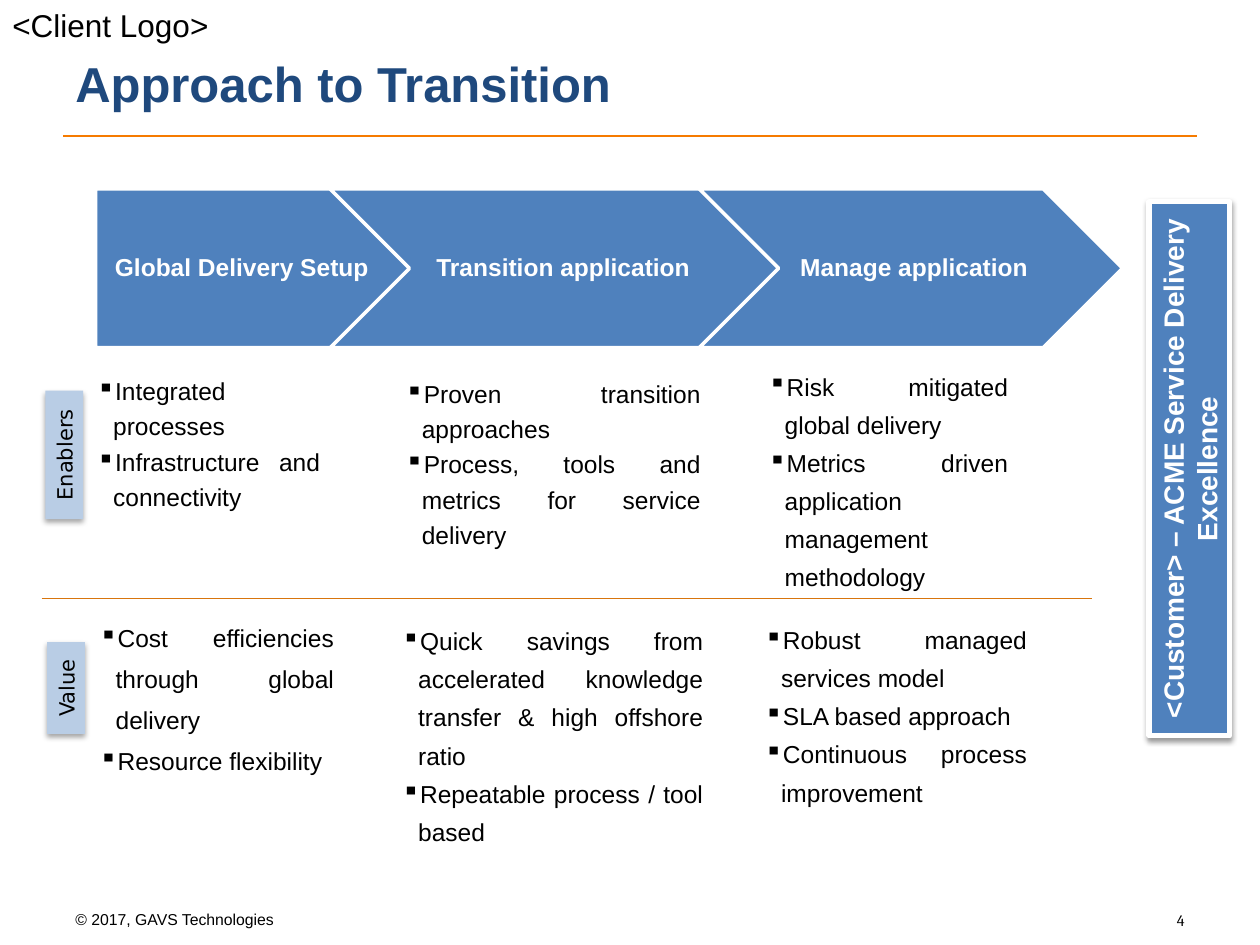
from lxml.etree import SubElement
from pptx import Presentation
from pptx.dml.color import RGBColor
from pptx.enum.shapes import MSO_CONNECTOR, MSO_SHAPE
from pptx.enum.text import MSO_ANCHOR, PP_ALIGN
from pptx.oxml.ns import qn
from pptx.util import Inches, Pt

THEME = {
    "font": "Arial", "label_font": "DejaVu Sans", "number_font": "Cambria",
    "text": "000000", "title": "1F497D", "light": "FFFFFF",
    "stage": "4F81BD", "label": "B9CDE5",
    "title_rule": "F67B00", "row_rule": "D8750D",
    "title_size": 28, "logo_size": 18, "banner_size": 16,
    "body_size": 14, "label_size": 12, "small_size": 9,
}
STAGE_TOP, STAGE_HEIGHT = 1.5, 1.26
BULLET_INDENT = 0.13

STAGES = [
    ("Global Delivery Setup", MSO_SHAPE.PENTAGON, 0.76, 2.6, (0.76, 2.28)),
    ("Transition application", MSO_SHAPE.CHEVRON, 2.62, 3.68, (3.24, 2.42)),
    ("Manage application", MSO_SHAPE.CHEVRON, 5.55, 3.36, (6.18, 2.11)),
]
BULLETS = [
    ((0.67, 2.89, 1.97, 1.23), 1.2,
     ["Integrated processes", "Infrastructure and connectivity"]),
    ((3.12, 2.91, 2.54, 1.51), 1.2,
     ["Proven transition approaches",
      "Process, tools and metrics for service delivery"]),
    ((6, 2.83, 2.1, 1.94), 1.3,
     ["Risk mitigated global delivery",
      "Metrics driven application management methodology"]),
    ((0.69, 4.8, 2.06, 1.42), 1.4,
     ["Cost efficiencies through global delivery", "Resource flexibility"]),
    ((3.09, 4.85, 2.59, 1.94), 1.3,
     ["Quick savings from accelerated knowledge transfer & high offshore ratio",
      "Repeatable process / tool based"]),
    ((5.97, 4.84, 2.28, 1.63), 1.3,
     ["Robust managed services model", "SLA based approach",
      "Continuous process improvement"]),
]
ROW_LABELS = [("Enablers", (0, 3.46, 1.02, 0.3)), ("Value", (0.16, 5.31, 0.73, 0.3))]
BANNER = ("<Customer> – ACME Service Delivery Excellence", (7.32, 3.4, 4.24, 0.64))
RULES = [(0.5, 9.5, 1.08, "title_rule"), (0.33, 8.67, 4.75, "row_rule")]


def color(name):
    """Return the theme colour of that name."""
    return RGBColor.from_string(THEME[name])


def style(paragraph, size, tint="text", font="font", bold=False, align=PP_ALIGN.LEFT):
    """Format a paragraph and its runs."""
    paragraph.alignment = align
    for run in paragraph.runs:
        run.font.size = Pt(THEME[size])
        run.font.name = THEME[font]
        run.font.bold = bold
        run.font.color.rgb = color(tint)


def add_text(slide, box, text, size, anchor=MSO_ANCHOR.TOP, **look):
    """Add a wrapped one-paragraph text box and return its frame."""
    frame = slide.shapes.add_textbox(*map(Inches, box)).text_frame
    frame.word_wrap = True
    frame.vertical_anchor = anchor
    frame.text = text
    style(frame.paragraphs[0], size, **look)
    return frame


def add_bullets(slide, box, spacing, items):
    """Add a justified list with square bullets."""
    frame = add_text(slide, box, "\n".join(items), "body_size")
    for paragraph in frame.paragraphs:
        properties = paragraph._p.get_or_add_pPr()
        properties.set("marL", str(Inches(BULLET_INDENT)))
        properties.set("indent", str(-Inches(BULLET_INDENT)))
        SubElement(properties, qn("a:buChar"), char="▪")
        paragraph.line_spacing = spacing
        style(paragraph, "body_size", align=PP_ALIGN.JUSTIFY)


def add_block(slide, kind, box, fill, line_width=0):
    """Add a filled shape, outlined in the light colour if a width is given."""
    block = slide.shapes.add_shape(kind, *map(Inches, box))
    block.shadow.inherit = False
    block.fill.solid()
    block.fill.fore_color.rgb = color(fill)
    if line_width:
        block.line.color.rgb = color("light")
        block.line.width = Pt(line_width)
    else:
        block.line.fill.background()
    return block


def add_upright(slide, text, box, fill, opacity, distance, line_width=0, **look):
    """Add a shadowed rectangle whose text reads upwards."""
    block = add_block(slide, MSO_SHAPE.RECTANGLE, box, fill, line_width)
    block.rotation = 270
    effects = block._element.spPr.find(qn("a:effectLst"))
    shadow = SubElement(effects, qn("a:outerShdw"), blurRad=str(Pt(3.1)),
                        dist=str(Pt(distance)), dir="5400000", rotWithShape="0")
    tint = SubElement(shadow, qn("a:srgbClr"), val=THEME["text"])
    SubElement(tint, qn("a:alpha"), val=str(opacity * 1000))
    block.text_frame.word_wrap = True
    block.text_frame.text = text
    style(block.text_frame.paragraphs[0], align=PP_ALIGN.CENTER, **look)


def add_rule(slide, left, right, top, tint):
    """Add a thin horizontal line."""
    rule = slide.shapes.add_connector(
        MSO_CONNECTOR.STRAIGHT, *map(Inches, (left, top, right, top)))
    rule.line.color.rgb = color(tint)
    rule.line.width = Pt(0.75)
    SubElement(rule._element.spPr, qn("a:effectLst"))


def add_stage(slide, name, kind, left, width, label_span):
    """Add one arrow of the process with its label."""
    add_block(slide, kind, (left, STAGE_TOP, width, STAGE_HEIGHT), "stage", 2)
    label_left, label_width = label_span
    label = add_text(slide, (label_left, STAGE_TOP, label_width, STAGE_HEIGHT), name,
                     "body_size", MSO_ANCHOR.MIDDLE, tint="light", bold=True,
                     align=PP_ALIGN.CENTER)
    label.margin_left, label.margin_right = Inches(0.06), Inches(0.02)
    label.paragraphs[0].line_spacing = 0.9


def main():
    """Build the transition approach slide."""
    deck = Presentation()
    deck.slide_width, deck.slide_height = Inches(10), Inches(7.5)
    slide = deck.slides.add_slide(deck.slide_layouts[6])

    for rule in RULES:
        add_rule(slide, *rule)
    add_text(slide, (0, 0, 2.5, 0.4), "<Client Logo>", "logo_size")
    add_text(slide, (0.5, 0.22, 9, 0.87), "Approach to Transition", "title_size",
             MSO_ANCHOR.MIDDLE, tint="title", bold=True)
    for name, box in ROW_LABELS:
        add_upright(slide, name, box, "label", 35, 1.8,
                    size="label_size", font="label_font")
    for stage in STAGES:
        add_stage(slide, *stage)
    for group in BULLETS:
        add_bullets(slide, *group)
    add_upright(slide, *BANNER, "stage", 38, 1.6, 3,
                size="banner_size", tint="light", bold=True)
    add_text(slide, (0.5, 7.17, 3.08, 0.25), "© 2017, GAVS Technologies", "small_size")
    add_text(slide, (7.17, 7.18, 2.33, 0.4), "4", "small_size",
             font="number_font", align=PP_ALIGN.RIGHT)
    deck.save("out.pptx")


if __name__ == "__main__":
    main()
